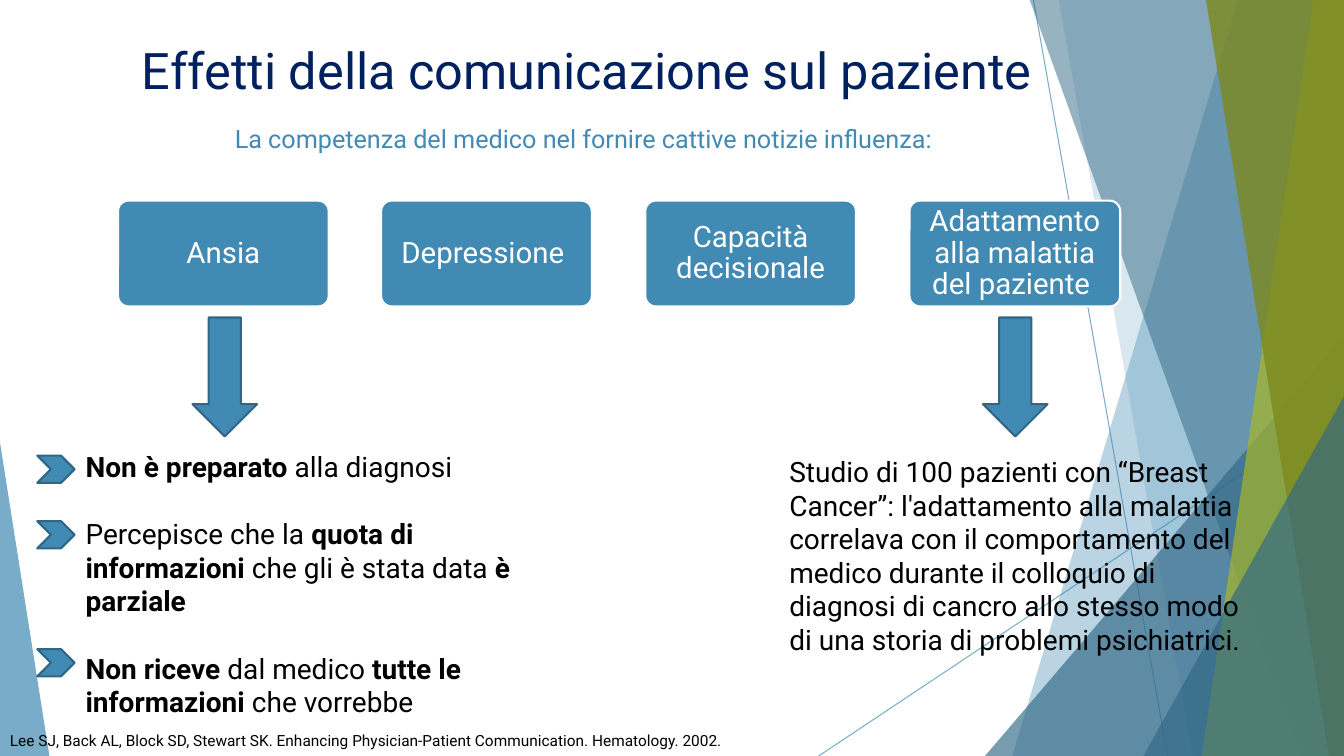
from pptx import Presentation
from pptx.dml.color import RGBColor
from pptx.enum.shapes import MSO_CONNECTOR, MSO_SHAPE as Preset
from pptx.enum.text import MSO_ANCHOR as Anchor, PP_ALIGN as Align
from pptx.oxml.ns import qn
from pptx.oxml.xmlchemy import OxmlElement
from pptx.util import Pt

EMU_PER_PX = 9144  # 100 px to the inch

BLUE, DARK_BLUE, OUTLINE = "418AB3", "316886", "306684"
GREEN, DARK_GREEN = "A6B727", "7D891D"
NAVY, BLACK, WHITE = "002060", "000000", "FFFFFF"


def px(*lengths):
    return [length * EMU_PER_PX for length in lengths]


def color(hex_value):
    return RGBColor.from_string(hex_value)


def set_opacity(shape, percent):
    """Apply one opacity to every solid colour of the shape."""
    for solid in shape._element.spPr.iter(qn("a:srgbClr")):
        alpha = OxmlElement("a:alpha")
        alpha.set("val", str(percent * 1000))
        solid.append(alpha)


class SlideBuilder:
    font = "Roboto"
    line_width = 1.5

    def __init__(self, slide):
        self.slide = slide
        self.shapes = slide.shapes

    def paint(self, shape, fill, outline=None, opacity=100):
        shape.shadow.inherit = False
        shape.fill.solid()
        shape.fill.fore_color.rgb = color(fill)
        if outline:
            shape.line.color.rgb = color(outline)
            shape.line.width = Pt(self.line_width)
        else:
            shape.line.fill.background()
        if opacity < 100:
            set_opacity(shape, opacity)
        return shape

    def preset(self, kind, box, fill, outline=None, opacity=100, adjustment=None):
        shape = self.shapes.add_shape(kind, *px(*box))
        if adjustment is not None:
            shape.adjustments[0] = adjustment
        return self.paint(shape, fill, outline, opacity)

    def polygon(self, points, fill, opacity):
        builder = self.shapes.build_freeform(*points[0], scale=EMU_PER_PX)
        builder.add_line_segments(points[1:], close=True)
        return self.paint(builder.convert_to_shape(), fill, opacity=opacity)

    def hairline(self, start, end):
        line = self.shapes.add_connector(MSO_CONNECTOR.STRAIGHT, *px(*start, *end))
        line.line.color.rgb = color(BLUE)
        line.line.width = Pt(0.75)
        line._element.spPr.append(OxmlElement("a:effectLst"))
        set_opacity(line, 70)

    def format_run(self, run, size, text_color, bold=False):
        run.font.name = self.font
        run.font.size = Pt(size)
        run.font.bold = bold
        run.font.color.rgb = color(text_color)

    def text(self, box, paragraphs, size, text_color, anchor=Anchor.TOP,
             indent=0, gap=0):
        """Add a text box; parts between asterisks are bold."""
        frame = self.shapes.add_textbox(*px(*box)).text_frame
        frame.word_wrap = True
        frame.vertical_anchor = anchor
        for index, marked_text in enumerate(paragraphs):
            paragraph = frame.add_paragraph() if index else frame.paragraphs[0]
            if index:
                paragraph.space_before = Pt(gap)
            if indent:
                paragraph._p.get_or_add_pPr().set("marL", str(indent * EMU_PER_PX))
            for position, part in enumerate(marked_text.split("*")):
                if part:
                    run = paragraph.add_run()
                    run.text = part
                    self.format_run(run, size, text_color, bold=position % 2 == 1)

    def label_box(self, box, label):
        shape = self.preset(Preset.ROUNDED_RECTANGLE, box, BLUE, WHITE, adjustment=0.1)
        frame = shape.text_frame
        frame.word_wrap = True
        frame.vertical_anchor = Anchor.MIDDLE
        frame.margin_left, frame.margin_right = px(7, 7)
        frame.margin_top, frame.margin_bottom = px(6, 6)
        frame.text = label
        paragraph = frame.paragraphs[0]
        paragraph.alignment = Align.CENTER
        paragraph.line_spacing = 0.9
        self.format_run(paragraph.runs[0], 21, WHITE)


def draw_background(builder, right, bottom):
    def band(top_left, bottom_left, fill, opacity):
        """Fill from a slanted left edge to the right side of the slide."""
        builder.polygon([(top_left, -1), (right, -1), (right, bottom),
                         (bottom_left, bottom)], fill, opacity)

    def corner(box, fill, opacity, apex):
        builder.preset(Preset.ISOSCELES_TRIANGLE, box, fill,
                       opacity=opacity, adjustment=apex)

    builder.hairline((1025, 0), (1158, bottom))
    builder.hairline((right, 403), (812, bottom))
    band(1228, 1004, BLUE, 36)
    band(1050, 1183, BLUE, 20)
    corner((977, 333, 356, 417), DARK_BLUE, 66, 1)
    band(1021, 1291, DARK_BLUE, 50)
    band(1303, 1192, GREEN, 70)
    band(1196, 1318, DARK_GREEN, 80)
    corner((1134, 393, 199, 357), DARK_BLUE, 66, 1)
    corner((0, 439, 49, 311), BLUE, 70, 0)


def main():
    width, height = 1333, 750
    presentation = Presentation()
    presentation.slide_width, presentation.slide_height = px(width, height)
    builder = SlideBuilder(presentation.slides.add_slide(presentation.slide_layouts[6]))

    draw_background(builder, width, height)
    builder.text((131, 29, 940, 80), ["Effetti della comunicazione sul paziente"],
                 36, NAVY, anchor=Anchor.MIDDLE)
    builder.text((223, 117, 752, 40),
                 ["La competenza del medico nel fornire cattive notizie influenza:"],
                 18, BLUE)

    effects = ["Ansia", "Depressione ", "Capacità decisionale",
               "Adattamento alla malattia del paziente "]
    first_left, last_left = 117, 902
    for index, effect in enumerate(effects):
        left = first_left + (last_left - first_left) * index // (len(effects) - 1)
        builder.label_box((left, 199, 209, 105), effect)

    for left in (191, 975):
        builder.preset(Preset.DOWN_ARROW, (left, 315, 64, 118), BLUE, OUTLINE)

    builder.text((37, 441, 515, 279), [
        "*Non è preparato *alla diagnosi",
        "Percepisce che la *quota di informazioni *che gli è stata data *è parziale*",
        "*Non riceve *dal medico *tutte le informazioni *che vorrebbe",
    ], 20, BLACK, indent=38, gap=24)
    for top in (452, 517, 644):
        builder.preset(Preset.CHEVRON, (37, top, 37, 27), BLUE, OUTLINE)

    builder.text((773, 446, 469, 246), [
        "Studio di 100 pazienti con “Breast Cancer”: l'adattamento alla malattia "
        "correlava con il comportamento del medico durante il colloquio di diagnosi "
        "di cancro allo stesso modo di una storia di problemi psichiatrici.",
    ], 20, BLACK)
    builder.text((0, 720, 824, 29), [
        "Lee SJ, Back AL, Block SD, Stewart SK. Enhancing Physician-Patient "
        "Communication. Hematology. 2002.",
    ], 11, BLACK)

    presentation.save("out.pptx")


if __name__ == "__main__":
    main()
